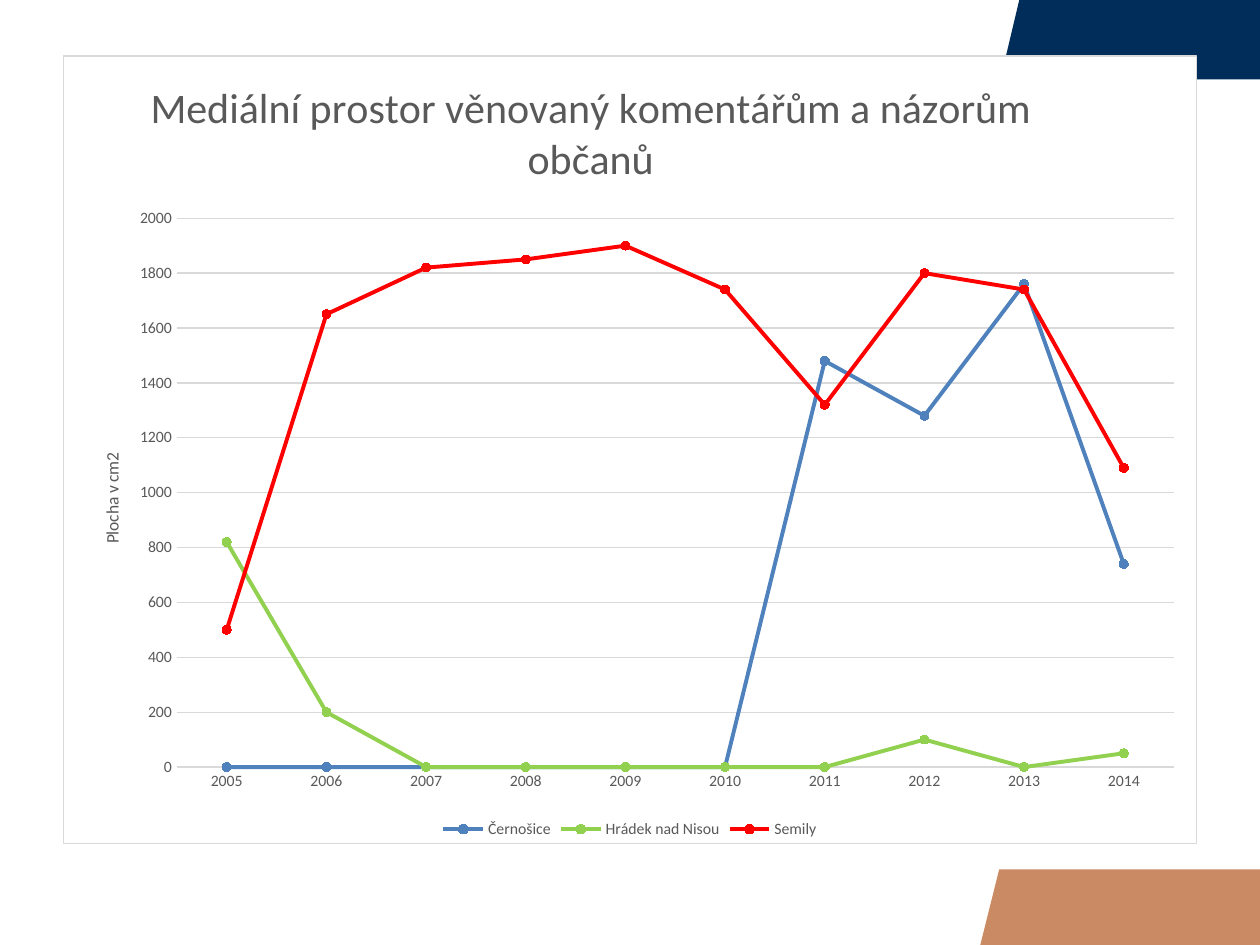
"""Build a slide with a line chart of media space given to citizens' opinions."""
import pptx
import pptx.chart.data
import pptx.dml.color
import pptx.enum.chart
import pptx.oxml
import pptx.oxml.ns
import pptx.util
from pptx.util import Inches

NAVY = pptx.dml.color.RGBColor(0x00, 0x2D, 0x5A)
COPPER = pptx.dml.color.RGBColor(0xCA, 0x8A, 0x64)
BLUE = pptx.dml.color.RGBColor(0x4F, 0x81, 0xBD)
GREEN = pptx.dml.color.RGBColor(0x92, 0xD0, 0x50)
RED = pptx.dml.color.RGBColor(0xFF, 0x00, 0x00)
TEXT_GREY = pptx.dml.color.RGBColor(0x59, 0x59, 0x59)
LINE_GREY = pptx.dml.color.RGBColor(0xD9, 0xD9, 0xD9)

YEARS = [str(year) for year in range(2005, 2015)]
TOWNS = [
    ("Černošice", BLUE, [0, 0, 0, 0, 0, 0, 1480, 1280, 1760, 740]),
    ("Hrádek nad Nisou", GREEN, [820, 200, 0, 0, 0, 0, 0, 100, 0, 50]),
    ("Semily", RED, [500, 1650, 1820, 1850, 1900, 1740, 1320, 1800, 1740, 1090]),
]


def set_attributes(target, values):
    """Set every attribute named in values on target."""
    for name, value in values.items():
        setattr(target, name, value)


def style_font(font, size, bold=False):
    """Give a chart font its face, size and grey colour."""
    set_attributes(font, {"name": "Calibri", "size": pptx.util.Pt(size), "bold": bold})
    font.color.rgb = TEXT_GREY


def style_line(line, color, width=0.75):
    """Give a line its colour and width in points."""
    line.color.rgb = color
    line.width = pptx.util.Pt(width)


def add_corner(slide, points, color):
    """Draw a slanted corner band through points given in inches."""
    outline = [(Inches(x), Inches(y)) for x, y in points]
    builder = slide.shapes.build_freeform(*outline[0])
    builder.add_line_segments(outline[1:])
    band = builder.convert_to_shape()
    band.shadow.inherit = False
    band.fill.solid()
    band.fill.fore_color.rgb = color
    band.line.fill.background()


def place(element, index, fractions, inner=False):
    """Fix the layout of a chart part at fractions of the chart size."""
    for layout in element.findall(pptx.oxml.ns.qn("c:layout")):
        element.remove(layout)
    target = '<c:layoutTarget val="inner"/>' if inner else ""
    modes = "".join(f'<c:{key}Mode val="edge"/>' for key in "xy")
    sizes = "".join(f'<c:{key} val="{value}"/>' for key, value in fractions.items())
    element.insert(index, pptx.oxml.parse_xml(
        f'<c:layout {pptx.oxml.ns.nsdecls("c")}><c:manualLayout>'
        f"{target}{modes}{sizes}</c:manualLayout></c:layout>"))


def write_title(title, text, size, fractions):
    """Write a chart or axis title and place it."""
    title.text_frame.text = text
    style_font(title.text_frame.paragraphs[0].runs[0].font, size)
    place(title._element, 1, fractions)


def frame_chart(chart):
    """Fill the chart area white with a thin grey border."""
    area = pptx.oxml.parse_xml(
        f'<c:spPr {pptx.oxml.ns.nsdecls("c", "a")}>'
        '<a:solidFill><a:srgbClr val="FFFFFF"/></a:solidFill>'
        f'<a:ln w="9525"><a:solidFill><a:srgbClr val="{LINE_GREY}"/></a:solidFill></a:ln>'
        "</c:spPr>")
    chart._chartSpace.find(pptx.oxml.ns.qn("c:chart")).addnext(area)


def style_axes(chart):
    """Style the year axis, the area axis and its gridlines."""
    for axis in (chart.category_axis, chart.value_axis):
        set_attributes(axis, {
            "major_tick_mark": pptx.enum.chart.XL_TICK_MARK.NONE,
            "minor_tick_mark": pptx.enum.chart.XL_TICK_MARK.NONE,
        })
        style_font(axis.tick_labels.font, 9)
    style_line(chart.category_axis.format.line, LINE_GREY)
    areas = chart.value_axis
    set_attributes(areas, {"minimum_scale": 0, "maximum_scale": 2000, "major_unit": 200})
    areas.format.line.fill.background()
    style_line(areas.major_gridlines.format.line, LINE_GREY)
    write_title(areas.axis_title, "Plocha v cm2", 10, {"x": 0.03, "y": 0.5})


def style_town(series, color):
    """Style one town's line and its round markers."""
    series.smooth = False
    style_line(series.format.line, color, 2.25)
    set_attributes(series.marker, {
        "style": pptx.enum.chart.XL_MARKER_STYLE.CIRCLE, "size": 5})
    series.marker.format.fill.solid()
    series.marker.format.fill.fore_color.rgb = color
    style_line(series.marker.format.line, color)


def add_media_chart(slide):
    """Add the line chart with its title, axes and legend."""
    data = pptx.chart.data.CategoryChartData()
    data.categories = YEARS
    for name, _, areas in TOWNS:
        data.add_series(name, areas)
    chart = slide.shapes.add_chart(
        pptx.enum.chart.XL_CHART_TYPE.LINE_MARKERS,
        Inches(0.5), Inches(0.44), Inches(9), Inches(6.26), data).chart
    style_font(chart.font, 10)
    frame_chart(chart)
    write_title(chart.chart_title,
                "Mediální prostor věnovaný komentářům a názorům občanů",
                24, {"x": 0.07, "y": 0.02})
    style_axes(chart)
    chart.plots[0].vary_by_categories = False
    for series, (_, color, _) in zip(chart.plots[0].series, TOWNS):
        style_town(series, color)
    plot_area = chart._chartSpace.find(".//" + pptx.oxml.ns.qn("c:plotArea"))
    place(plot_area, 0, {"x": 0.1, "y": 0.206, "w": 0.88, "h": 0.697}, inner=True)
    chart.has_legend = True
    set_attributes(chart.legend, {
        "position": pptx.enum.chart.XL_LEGEND_POSITION.BOTTOM,
        "include_in_layout": False})
    style_font(chart.legend.font, 9)


def main():
    """Build and save the slide."""
    deck = pptx.Presentation()
    set_attributes(deck, {"slide_width": Inches(10), "slide_height": Inches(7.5)})
    slide = deck.slides.add_slide(deck.slide_layouts[6])
    add_corner(slide, [(7.94, 0.63), (8.09, 0), (10, 0), (10, 0.63)], NAVY)
    add_corner(slide, [(7.78, 7.5), (7.93, 6.9), (10, 6.9), (10, 7.5)], COPPER)
    add_media_chart(slide)
    deck.save("out.pptx")


if __name__ == "__main__":
    main()
